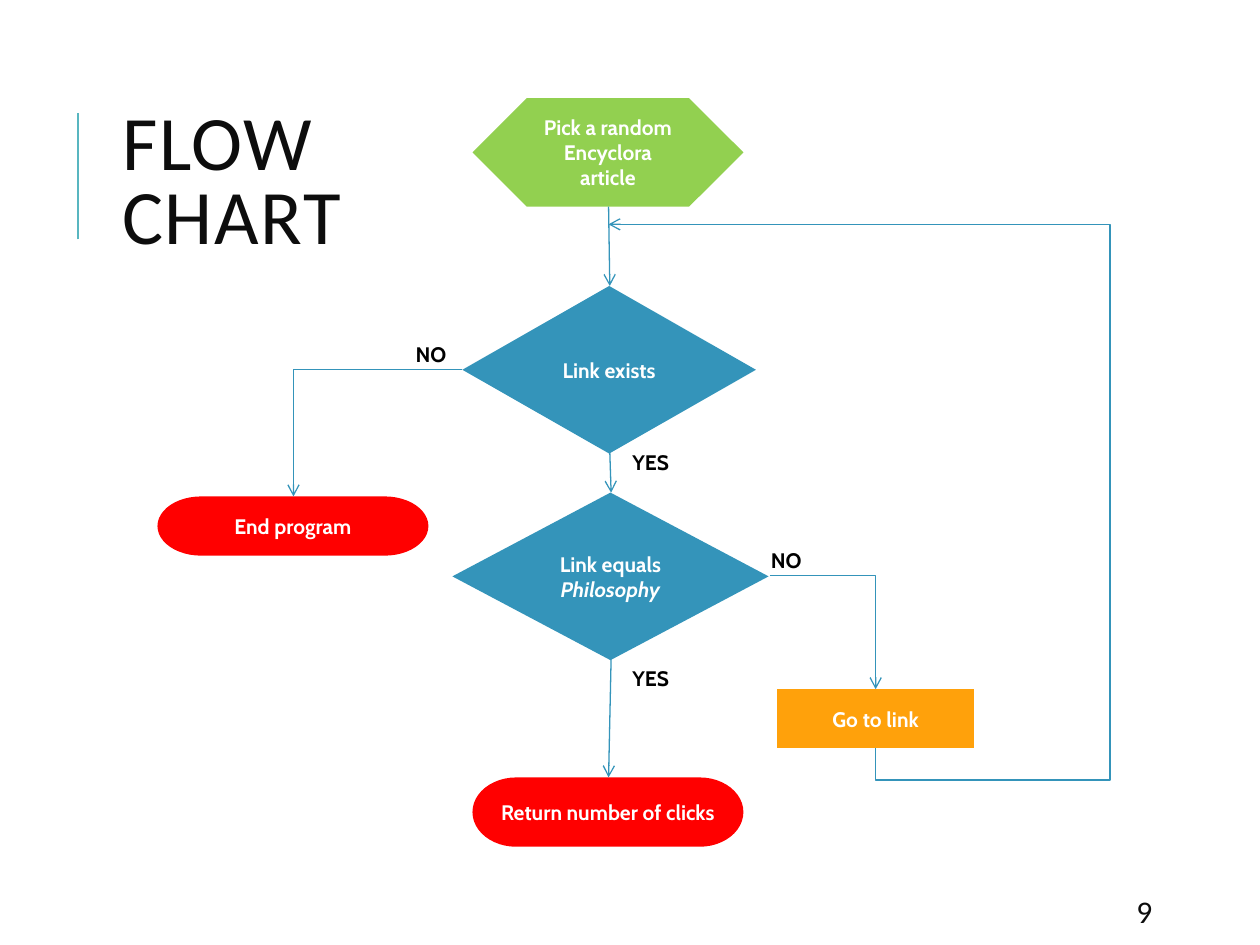
from lxml.etree import SubElement
from pptx import Presentation
from pptx.dml.color import RGBColor
from pptx.enum.shapes import MSO_CONNECTOR as Link, MSO_SHAPE as Shape
from pptx.enum.text import MSO_ANCHOR as Anchor, PP_ALIGN as Align
from pptx.oxml.ns import qn
from pptx.util import Emu, Inches, Pt

# Grid: 100 columns by 75 rows of square cells
COLUMNS, ROWS = 100, 75
CELL = Inches(10) // COLUMNS

BLUE, GREEN, RED, ORANGE = "3494BA", "92D050", "FF0000", "FFA10B"
TEAL, WHITE, BLACK, INK = "58B6C0", "FFFFFF", "000000", "0D0D0D"

NODE_FONT = {"name": "Cabin", "size": Pt(12), "bold": True}
TITLE_FONT = {"name": "Calibri", "size": Pt(44)}
NUMBER_FONT = {"name": "Calibri", "size": Pt(18)}
MIDDLE_FRAME = {"word_wrap": True, "vertical_anchor": Anchor.MIDDLE}
TOP_FRAME = {"word_wrap": True, "vertical_anchor": Anchor.TOP}
PLACEHOLDER_FRAME = MIDDLE_FRAME | {
    "margin_left": Inches(0.13), "margin_right": Inches(0.13),
    "margin_top": Inches(0.07), "margin_bottom": Inches(0.07)}

# Preset, fill, grid place, text spans (text, italic)
NODES = [
    (Shape.FLOWCHART_PREPARATION, GREEN, (37.5, 7.8, 21.5, 8.6),
     [("Pick a random Encyclora article", False)]),
    (Shape.FLOWCHART_DECISION, BLUE, (36.7, 22.7, 23.3, 13.3),
     [("Link exists", False)]),
    (Shape.FLOWCHART_DECISION, BLUE, (35.9, 39.1, 25.1, 13.3),
     [("Link equals ", False), ("Philosophy", True)]),
    (Shape.FLOWCHART_TERMINATOR, RED, (12.5, 39.4, 21.5, 4.7),
     [("End program", False)]),
    (Shape.FLOWCHART_TERMINATOR, RED, (37.5, 61.7, 21.5, 5.5),
     [("Return number of clicks", False)]),
    (Shape.FLOWCHART_PROCESS, ORANGE, (61.7, 54.7, 15.6, 4.7),
     [("Go to link", False)]),
]
ANSWERS = [("NO", (32, 26.6, 6.3, 3)), ("YES", (49.2, 35.2, 5.5, 3)),
           ("YES", (49.2, 52.3, 5.5, 3)), ("NO", (60.2, 43, 5.5, 3))]
STRAIGHT_ARROWS = [(48.3, 16.4, 48.4, 22.7), (48.4, 35.9, 48.5, 39.1),
                   (48.5, 52.3, 48.3, 61.7)]
CORNER_ARROWS = [(36.7, 29.3, 23.3, 39.4), (61.1, 45.7, 69.5, 54.7)]


def grid(*cells):
    return [Emu(round(cell * CELL)) for cell in cells]


def color(hex_text):
    return RGBColor.from_string(hex_text)


def set_all(target, values):
    for name, value in values.items():
        setattr(target, name, value)


def write(box, spans, font, hex_text, frame, align=Align.LEFT):
    set_all(box.text_frame, frame)
    para = box.text_frame.paragraphs[0]
    para.alignment = align
    for text, italic in spans:
        span = para.add_run()
        span.text = text
        set_all(span.font, font | {"italic": italic})
        span.font.color.rgb = color(hex_text)
    return para


def add_text(page, text, place, font, hex_text, frame):
    box = page.shapes.add_textbox(*grid(*place))
    return write(box, [(text, False)], font, hex_text, frame)


def add_node(page, preset, fill, place, spans):
    node = page.shapes.add_shape(preset, *grid(*place))
    node.shadow.inherit = False
    node.fill.solid()
    node.fill.fore_color.rgb = color(fill)
    node.line.fill.background()
    write(node, spans, NODE_FONT, WHITE, MIDDLE_FRAME, Align.CENTER)


def add_line(page, ends, kind=Link.STRAIGHT, hex_text=BLUE, width=0.75, arrow=True):
    line = page.shapes.add_connector(kind, *grid(*ends))
    line.line.color.rgb = color(hex_text)
    line.line.width = Pt(width)
    properties = line._element.spPr
    if arrow:
        SubElement(properties.find(qn("a:ln")), qn("a:tailEnd"), type="arrow")
    SubElement(properties, qn("a:effectLst"))
    return properties


def add_corner_arrow(page, ends):
    properties = add_line(page, ends, Link.ELBOW)
    properties.find(qn("a:prstGeom")).set("prst", "bentConnector2")


def add_loop_arrow(page):
    """Leads from the link step round the right side to the top."""
    left, top, width, height = 38.1, 28, 41.6, 21.2
    properties = add_line(page, (left, top, left + width, top + height), Link.ELBOW)
    frame = properties.find(qn("a:xfrm"))
    frame.set("rot", str(90 * 60000))
    frame.set("flipH", "1")
    shape = properties.find(qn("a:prstGeom"))
    shape.set("prst", "bentConnector4")
    guides = shape.find(qn("a:avLst"))
    for name, share in (("adj1", -6000), ("adj2", -87700)):
        SubElement(guides, qn("a:gd"), name=name, fmla=f"val {share}")


def main():
    deck = Presentation()
    deck.slide_width, deck.slide_height = grid(COLUMNS, ROWS)
    page = deck.slides.add_slide(deck.slide_layouts[6])

    # Title, accent rule and page number
    add_line(page, (6.2, 19, 6.2, 9), hex_text=TEAL, width=1.5, arrow=False)
    title = add_text(page, "FLOW CHART", (8.4, 5.2, 36, 19), TITLE_FONT, INK,
                     PLACEHOLDER_FRAME)
    title.line_spacing = 0.8
    title.runs[0].font._element.set("spc", "100")
    add_text(page, "9", (88.9, 70.8, 8, 3), NUMBER_FONT, INK, PLACEHOLDER_FRAME)

    # Steps of the flow
    for node in NODES:
        add_node(page, *node)

    # Arrows between the steps
    for ends in STRAIGHT_ARROWS:
        add_line(page, ends)
    for ends in CORNER_ARROWS:
        add_corner_arrow(page, ends)
    add_loop_arrow(page)

    # Answers beside the decisions
    for text, place in ANSWERS:
        add_text(page, text, place, NODE_FONT, BLACK, TOP_FRAME)

    deck.save("out.pptx")


if __name__ == "__main__":
    main()
